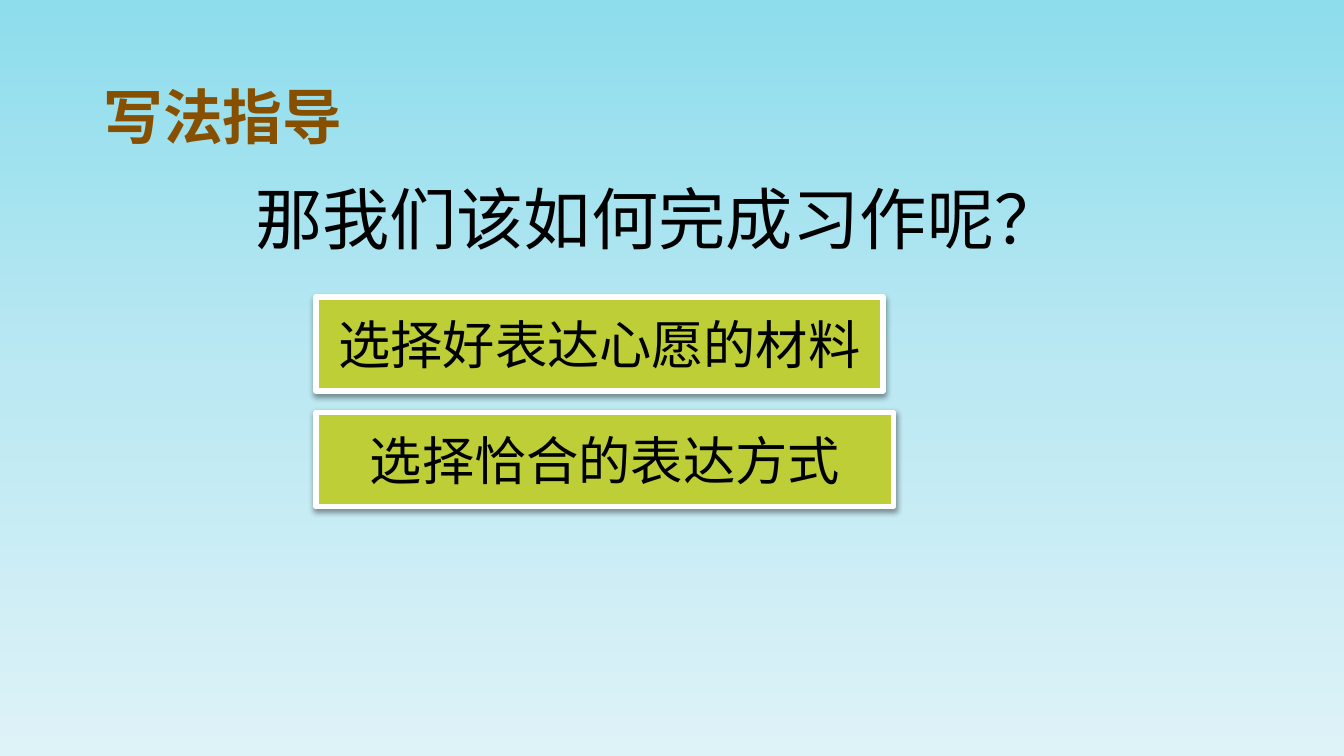
import copy

import lxml.etree
import pptx
import pptx.dml.color
import pptx.enum.shapes
import pptx.enum.text
import pptx.oxml.ns
import pptx.util

Pt = pptx.util.Pt
qn = pptx.oxml.ns.qn
CJK_FONT = "Noto Sans CJK SC"
BLACK = "000000"


def color(hex_string):
    return pptx.dml.color.RGBColor.from_string(hex_string)


def paint_background(slide, stop_colors):
    fill = slide.background.fill
    fill.gradient()
    fill.gradient_angle = 270
    stop_list = slide._element.find(".//" + qn("a:gsLst"))
    stop_list.append(copy.deepcopy(stop_list[-1]))
    for index, stop in enumerate(fill.gradient_stops):
        stop.position = index / (len(stop_colors) - 1)
        stop.color.rgb = color(stop_colors[index])


def add_run(paragraph, text, size, hex_color, font_name=CJK_FONT, bold=False):
    run = paragraph.add_run()
    run.text = text
    run.font.size = Pt(size)
    run.font.bold = bold
    run.font.color.rgb = color(hex_color)
    run.font.name = font_name
    east_asian = lxml.etree.Element(qn("a:ea"), typeface=CJK_FONT)
    run.font._element.find(qn("a:latin")).addnext(east_asian)


def add_text(slide, left, top, width, height, text, size, hex_color, bold=False, wrap=True):
    box = slide.shapes.add_textbox(Pt(left), Pt(top), Pt(width), Pt(height))
    frame = box.text_frame
    frame.word_wrap = wrap
    frame.auto_size = pptx.enum.text.MSO_AUTO_SIZE.SHAPE_TO_FIT_TEXT
    add_run(frame.paragraphs[0], text, size, hex_color, bold=bold)
    return frame


def add_shadow(shape):
    shape.shadow.inherit = False
    effects = shape._element.spPr.find(qn("a:effectLst"))
    shadow = lxml.etree.SubElement(
        effects, qn("a:outerShdw"), blurRad=str(Pt(3.1)), dist=str(Pt(1.6)),
        dir="5400000", rotWithShape="0")
    shade = lxml.etree.SubElement(shadow, qn("a:srgbClr"), val=BLACK)
    lxml.etree.SubElement(shade, qn("a:alpha"), val="38000")


def add_answer(slide, top, width, text):
    shape = slide.shapes.add_shape(
        pptx.enum.shapes.MSO_SHAPE.RECTANGLE, Pt(169.2), Pt(top), Pt(width), Pt(50.4))
    shape.fill.solid()
    shape.fill.fore_color.rgb = color("BECE37")
    shape.line.color.rgb = color("FFFFFF")
    shape.line.width = Pt(3)
    add_shadow(shape)
    frame = shape.text_frame
    frame.word_wrap = True
    frame.vertical_anchor = pptx.enum.text.MSO_ANCHOR.MIDDLE
    paragraph = frame.paragraphs[0]
    paragraph.alignment = pptx.enum.text.PP_ALIGN.CENTER
    add_run(paragraph, text, 28, BLACK, font_name="Times New Roman")


def main():
    presentation = pptx.Presentation()
    presentation.slide_width = Pt(720)
    presentation.slide_height = Pt(405)
    slide = presentation.slides.add_slide(presentation.slide_layouts[6])
    paint_background(slide, ["8EDDED", "BBE8F2", "DEF3F8"])

    heading = add_text(slide, 50.4, 39.6, 157.7, 43.9, "写法指导", 32, "875000", bold=True)
    heading.margin_left = heading.margin_right = Pt(5.04)
    heading.margin_top = heading.margin_bottom = Pt(2.88)
    add_text(slide, 129.6, 91.4, 450.7, 51.1, "那我们该如何完成习作呢？", 36, BLACK, wrap=False)

    answers = [("选择好表达心愿的材料", 303.8), ("选择恰合的表达方式", 309.6)]
    for index, (text, width) in enumerate(answers):
        add_answer(slide, 159.1 + index * 61.9, width, text)

    presentation.save("out.pptx")


if __name__ == "__main__":
    main()
